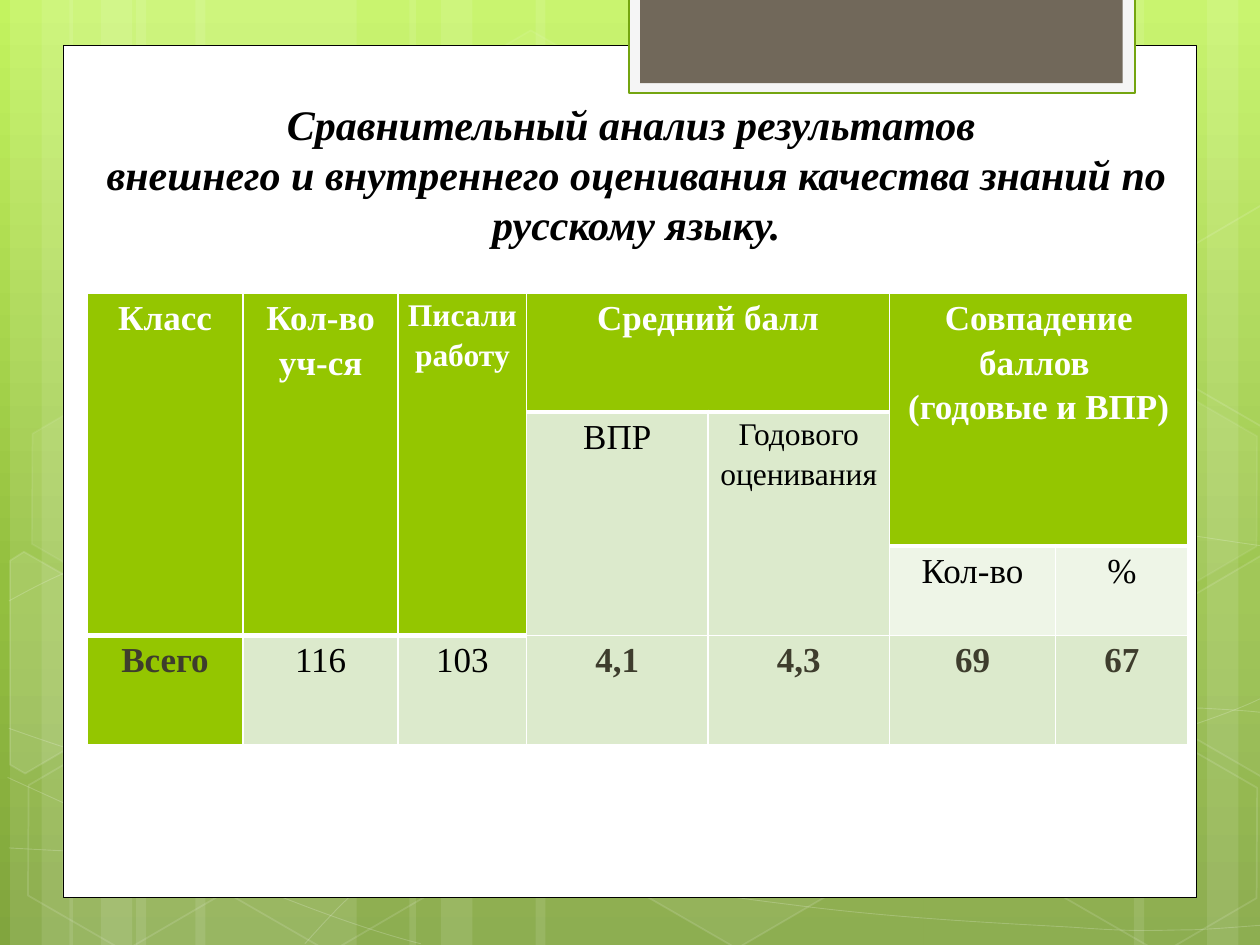
"""Builds the slide comparing external and internal grading in Russian."""
from dataclasses import dataclass
from typing import Optional

from lxml import etree
from pptx import Presentation
from pptx.dml.color import RGBColor
from pptx.enum.shapes import MSO_SHAPE
from pptx.enum.text import MSO_AUTO_SIZE, PP_ALIGN
from pptx.oxml.ns import qn
from pptx.util import Inches, Pt

RECTANGLE = MSO_SHAPE.RECTANGLE
HEXAGON = MSO_SHAPE.HEXAGON
CENTER = PP_ALIGN.CENTER
GROW = MSO_AUTO_SIZE.SHAPE_TO_FIT_TEXT


@dataclass(frozen=True)
class Theme:
    font: str = "Times New Roman"
    white: str = "FFFFFF"
    black: str = "000000"
    olive: str = "3E3D2D"
    green: str = "94C600"
    pale: str = "DCEACC"
    paler: str = "EEF5E7"
    tab_frame: str = "F5F5F5"
    tab_edge: str = "74A510"
    tab: str = "71685A"
    backdrop: tuple = ((0, "C3F35F"), (62, "93BF3F"), (100, "81A53E"))
    title_size: int = 24
    cell_size: int = 20
    small_size: int = 18
    thin: int = 1
    thick: int = 3


THEME = Theme()


@dataclass(frozen=True)
class Paint:
    fill: Optional[str] = None
    fill_alpha: int = 100
    line: Optional[str] = None
    weight: float = 1
    line_alpha: int = 100


@dataclass(frozen=True)
class Hexagon:
    left: float
    top: float
    fill_alpha: int
    line_alpha: int


@dataclass(frozen=True)
class Entry:
    row: int
    col: int
    text: str
    fill: str
    color: str = THEME.black
    bold: bool = False
    rows: int = 1
    cols: int = 1
    size: int = THEME.cell_size
    top: int = THEME.thin
    bottom: int = THEME.thin


BAND_WIDTHS = {
    1.75: (1.08, 1.55, 7.33), 0.5: (0.08, 0.55, 9.58, 3.25),
    0.83: (0.33, 0.8, 9, 3.5), 3.08: (4.25,),
}
WAVES = [
    [(0.07, 6.73), (0.61, 6.76), (1.15, 6.79), (1.9, 6.78), (2.65, 6.77), (3.58, 6.75), (4.58, 6.65),
     (5.58, 6.55), (7, 6.36), (7.92, 6.17), (8.83, 5.98), (9.77, 5.68), (10.07, 5.51)],
    [(0.07, 4.77), (0.36, 4.61), (0.65, 4.46), (1.21, 4.31), (1.78, 4.16), (2.59, 3.94), (3.47, 3.87),
     (4.36, 3.8), (5.44, 3.79), (6.54, 3.87), (7.64, 3.95), (9.47, 4.26), (10.07, 4.34)],
    [(0.06, 6.17), (1.27, 6.72), (2.47, 7.27), (3.34, 7.49)],
    [(0.07, 5.78), (0.38, 5.89), (0.7, 6), (1.28, 6.16), (1.86, 6.31), (2.73, 6.56), (3.57, 6.73),
     (4.4, 6.9), (5.45, 7.08), (6.28, 7.18), (7.11, 7.29), (8, 7.33), (8.53, 7.36),
     (9.05, 7.4), (9.19, 7.38), (9.45, 7.38), (9.71, 7.37), (9.89, 7.35), (10.07, 7.34)],
    [(2.42, 7.49), (2.6, 7.29), (2.78, 7.09), (3.02, 6.91), (3.26, 6.73), (3.6, 6.53), (3.88, 6.39),
     (4.16, 6.25), (4.33, 6.19), (4.7, 6.09), (5.06, 5.99), (5.73, 5.85), (6.08, 5.78),
     (6.44, 5.71), (6.49, 5.71), (6.8, 5.69), (7.11, 5.66), (7.6, 5.63), (7.94, 5.62),
     (8.29, 5.61), (8.86, 5.62), (8.86, 5.62), (8.86, 5.62), (9.53, 5.62), (9.53, 5.62),
     (9.71, 5.63), (9.88, 5.64), (9.97, 5.65), (10.06, 5.66), (10.03, 5.65), (10.06, 5.66)],
]
HEXAGONS = [
    Hexagon(3.34, 0.36, 4, 8), Hexagon(4.97, 5.89, 6, 12), Hexagon(0.11, 5.91, 0, 12),
    Hexagon(0.14, 3.12, 7, 8), Hexagon(1.74, 5.92, 0, 12), Hexagon(7.53, 4.53, 10, 12),
    Hexagon(8.34, 5.93, 0, 12), Hexagon(8.34, 3.14, 7, 8),
]
CUT_HEXAGONS = [
    (10, [(0.08, 4.45), (0.19, 4.38), (0.96, 4.82), (0.95, 5.7), (0.2, 6.14), (0.08, 6.07)]),
    (4, [(9.26, 4.85), (10.01, 4.41), (10.09, 4.46), (10.09, 6.13), (10.02, 6.17), (9.26, 5.73)]),
    (0, [(9.26, 2.07), (10.01, 1.63), (10.1, 1.68), (10.09, 3.35), (10.02, 3.39), (9.26, 2.95)]),
]
COLUMN_WIDTHS = [1.24, 1.23, 1.02, 1.44, 1.44, 1.32, 1.05]
ROW_HEIGHTS = [0.94, 0.31, 0.39, 0.87]
HEADING = dict(fill=THEME.green, color=THEME.white, bold=True, bottom=THEME.thick)
TOTAL = dict(fill=THEME.pale, color=THEME.olive, bold=True)
ENTRIES = [
    Entry(0, 0, "Класс", rows=3, **HEADING),
    Entry(0, 1, "Кол-во уч-ся", rows=3, **HEADING),
    Entry(0, 2, "Писали работу", rows=3, size=THEME.small_size, **HEADING),
    Entry(0, 3, "Средний балл", cols=2, **HEADING),
    Entry(0, 5, "Совпадение баллов \n(годовые и ВПР)", rows=2, cols=2, **HEADING),
    Entry(1, 3, "ВПР", THEME.pale, rows=2, top=THEME.thick),
    Entry(1, 4, "Годового оценивания", THEME.pale, rows=2, size=THEME.small_size, top=THEME.thick),
    Entry(2, 5, "Кол-во", THEME.paler, top=THEME.thick),
    Entry(2, 6, "%", THEME.paler, top=THEME.thick),
    Entry(3, 0, "Всего", THEME.green, THEME.olive, True, top=THEME.thick),
    Entry(3, 1, "116", THEME.pale, top=THEME.thick),
    Entry(3, 2, "103", THEME.pale, top=THEME.thick),
    *(Entry(3, col, mark, **TOTAL) for col, mark in enumerate(("4,1", "4,3", "69", "67"), 3)),
]


def add_color(parent, color: str, alpha: int = 100) -> None:
    node = etree.SubElement(parent, qn("a:srgbClr"), val=color)
    if alpha < 100:
        etree.SubElement(node, qn("a:alpha"), val=str(alpha * 1000))


def paint_part(fill, holder, color: Optional[str], alpha: int) -> None:
    if color is None or alpha == 0:
        fill.background()
        return
    fill.solid()
    fill.fore_color.rgb = RGBColor.from_string(color)
    solid = holder.find(qn("a:solidFill"))
    solid.clear()
    add_color(solid, color, alpha)


def paint_shape(shape, paint: Paint) -> None:
    shape.shadow.inherit = False
    properties = shape.element.spPr
    paint_part(shape.fill, properties, paint.fill, paint.fill_alpha)
    shape.line.width = Pt(paint.weight)
    paint_part(shape.line.fill, properties.find(qn("a:ln")), paint.line, paint.line_alpha)


def add_box(slide, kind, left: float, top: float, width: float, height: float, paint: Paint):
    shape = slide.shapes.add_shape(kind, Inches(left), Inches(top), Inches(width), Inches(height))
    paint_shape(shape, paint)
    return shape


def add_outline(slide, points: list, paint: Paint, close: bool):
    start, *rest = [(Inches(x), Inches(y)) for x, y in points]
    builder = slide.shapes.build_freeform(*start)
    builder.add_line_segments(rest, close=close)
    shape = builder.convert_to_shape()
    paint_shape(shape, paint)
    return shape


def add_wave(slide, knots: list) -> None:
    paint = Paint(line=THEME.white, weight=0.5, line_alpha=20)
    wave = add_outline(slide, knots, paint, False)
    segments = list(wave.element.iter(qn("a:lnTo")))
    outline = segments[0].getparent()
    for first in range(0, len(segments), 3):
        curve = etree.SubElement(outline, qn("a:cubicBezTo"))
        for segment in segments[first:first + 3]:
            curve.append(segment[0])
            outline.remove(segment)


def add_backdrop(slide) -> None:
    fill = slide.background.fill
    fill.gradient()
    fill.gradient_angle = 270
    stops = next(slide.element.iter(qn("a:gsLst")))
    stops.clear()
    for position, color in THEME.backdrop:
        add_color(etree.SubElement(stops, qn("a:gs"), pos=str(position * 1000)), color)
    for width, lefts in BAND_WIDTHS.items():
        for left in lefts:
            add_box(slide, RECTANGLE, left, 0, width, 7.5, Paint(THEME.white, 10))
    for knots in WAVES:
        add_wave(slide, knots)
    for item in HEXAGONS:
        paint = Paint(THEME.white, item.fill_alpha, THEME.white, 1, item.line_alpha)
        hexagon = add_box(slide, HEXAGON, item.left, item.top, 1.75, 1.52, paint)
        hexagon.adjustments[0] = 0.285
        hexagon.rotation = 30
    for alpha, corners in CUT_HEXAGONS:
        add_outline(slide, corners, Paint(THEME.white, alpha, THEME.white, 1, 12), True)


def format_text(frame, text: str, size: int, color: str, bold: bool, italic: bool, spacing: float) -> None:
    frame.text = text
    frame.word_wrap = True
    for paragraph in frame.paragraphs:
        paragraph.alignment = CENTER
        paragraph.line_spacing = spacing
        for run in paragraph.runs:
            font = run.font
            font.name, font.size, font.bold, font.italic = THEME.font, Pt(size), bold, italic
            font.color.rgb = RGBColor.from_string(color)


def style_cell(cell, entry: Entry, top: int, bottom: int) -> None:
    cell.fill.solid()
    cell.fill.fore_color.rgb = RGBColor.from_string(entry.fill)
    cell.margin_left = cell.margin_right = Inches(0.07)
    cell.margin_top = cell.margin_bottom = 0
    properties = cell._tc.get_or_add_tcPr()
    sides = {"lnL": THEME.thin, "lnR": THEME.thin, "lnT": top, "lnB": bottom}
    for index, (side, weight) in enumerate(sides.items()):
        border = etree.Element(qn(f"a:{side}"), w=str(Pt(weight)))
        add_color(etree.SubElement(border, qn("a:solidFill")), THEME.white)
        properties.insert(index, border)


def add_results(slide) -> None:
    table = slide.shapes.add_table(
        len(ROW_HEIGHTS), len(COLUMN_WIDTHS), Inches(0.69), Inches(2.33),
        Inches(sum(COLUMN_WIDTHS)), Inches(sum(ROW_HEIGHTS))).table
    table.first_row = table.horz_banding = False
    for column, width in zip(table.columns, COLUMN_WIDTHS):
        column.width = Inches(width)
    for row, height in zip(table.rows, ROW_HEIGHTS):
        row.height = Inches(height)
    for entry in ENTRIES:
        last_row, last_col = entry.row + entry.rows - 1, entry.col + entry.cols - 1
        origin = table.cell(entry.row, entry.col)
        if (entry.rows, entry.cols) != (1, 1):
            origin.merge(table.cell(last_row, last_col))
        for row in range(entry.row, last_row + 1):
            for col in range(entry.col, last_col + 1):
                top = entry.top if row == entry.row else THEME.thin
                bottom = entry.bottom if row == last_row else THEME.thin
                style_cell(table.cell(row, col), entry, top, bottom)
        format_text(origin.text_frame, entry.text, entry.size, entry.color, entry.bold, False, 1.15)


def main() -> None:
    deck = Presentation()
    deck.slide_width, deck.slide_height = Inches(10), Inches(7.5)
    slide = deck.slides.add_slide(deck.slide_layouts[6])
    add_backdrop(slide)
    add_box(slide, RECTANGLE, 0.5, 0.36, 9, 6.76, Paint(THEME.white, line=THEME.black, weight=0.5))
    add_box(slide, RECTANGLE, 4.99, -0.02, 4.02, 0.76, Paint(THEME.tab_frame, line=THEME.tab_edge, weight=1.25))
    add_box(slide, RECTANGLE, 5.08, -0.02, 3.83, 0.68, Paint(THEME.tab))
    add_results(slide)
    title = slide.shapes.add_textbox(Inches(0.64), Inches(0.73), Inches(8.82), Inches(1.31))
    format_text(
        title.text_frame,
        "Сравнительный анализ результатов \nвнешнего и внутреннего оценивания качества знаний по русскому языку.",
        THEME.title_size, THEME.black, True, True, 1.0)
    title.text_frame.auto_size = GROW
    deck.save("out.pptx")


if __name__ == "__main__":
    main()
